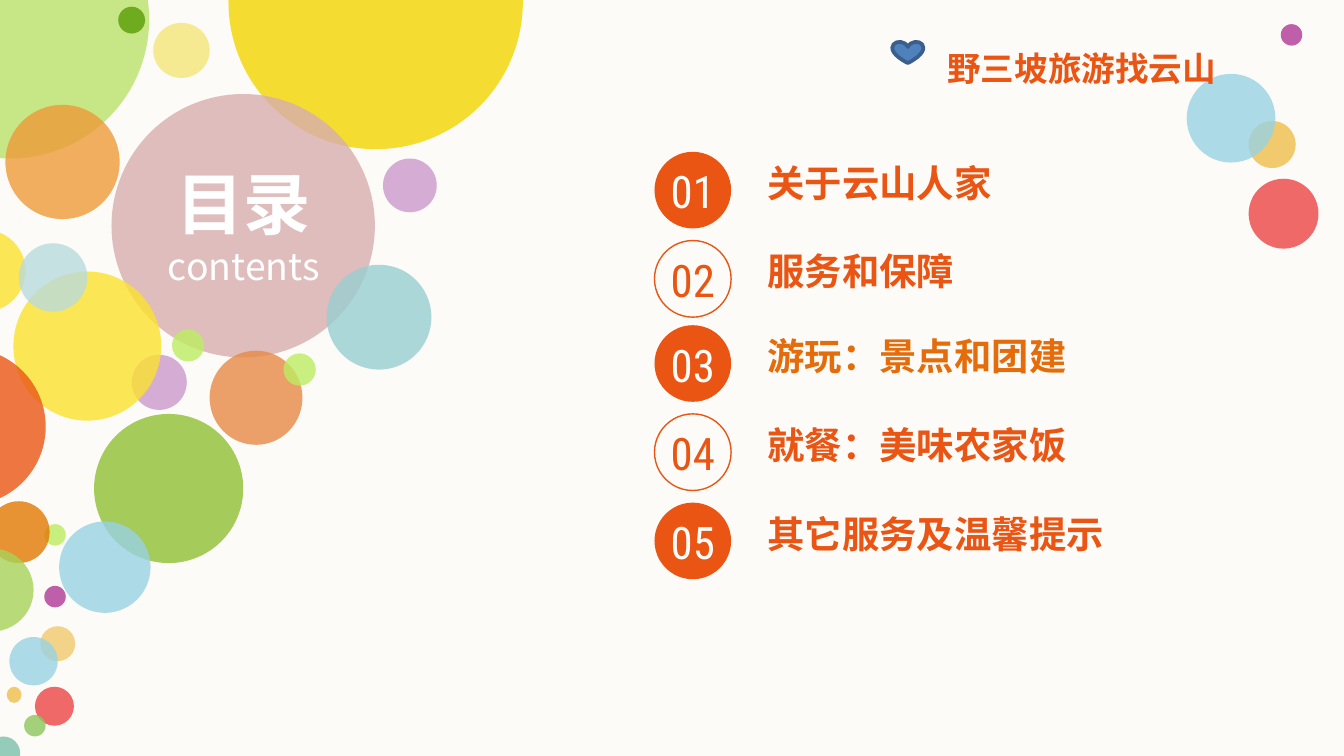
import typing

import pptx
import pptx.dml.color
import pptx.enum.shapes
import pptx.enum.text
import pptx.oxml.ns
import pptx.util
from lxml import etree

Inches = pptx.util.Inches
Pt = pptx.util.Pt
KIND = pptx.enum.shapes.MSO_SHAPE
ALIGN = pptx.enum.text.PP_ALIGN
qn = pptx.oxml.ns.qn

ORANGE = "EA5514"
CREAM = "FCFBF7"
WHITE = "FFFFFF"
CJK = "Noto Sans CJK SC"
ROBOTO = "Roboto Condensed"
CALIBRI = "Calibri"


class Bubble(typing.NamedTuple):
    left: float
    top: float
    width: float
    height: float
    color: str
    alpha: int = 80


class Item(typing.NamedTuple):
    top: float
    label: str
    width: float
    font: str
    color: str = ORANGE


LEFT = [
    Bubble(-0.96, -0.89, 2.07, 2.07, "BAE36B"),
    Bubble(0.88, 0.05, 0.2, 0.2, "6EAB1F", 100),
    Bubble(0.04, 0.78, 0.85, 0.85, "ED9B38"),
    Bubble(1.14, 0.17, 0.42, 0.41, "F5EA91", 100),
    Bubble(1.7, -1.08, 2.19, 2.19, "F4D500"),
    Bubble(0.83, 0.7, 1.96, 1.96, "D8AEAF"),
    Bubble(2.43, 1.97, 0.78, 0.78, "99CED2"),
    Bubble(2.85, 1.18, 0.4, 0.4, "CB99CC"),
    Bubble(1.56, 2.61, 0.69, 0.7, "E78A47"),
    Bubble(0.7, 3.08, 1.11, 1.11, "A5CB5A", 100),
    Bubble(2.11, 2.63, 0.24, 0.24, "BDED63"),
    Bubble(1.28, 2.45, 0.24, 0.24, "BCED61"),
    Bubble(0.98, 2.64, 0.41, 0.41, "CB99CC"),
    Bubble(0.1, 2.02, 1.1, 1.11, "FBE22D"),
    Bubble(-0.42, 1.71, 0.61, 0.61, "FBE22D"),
    Bubble(0.33, 3.9, 0.16, 0.16, "BCED60"),
    Bubble(0.33, 4.36, 0.16, 0.16, "B03896"),
    Bubble(0.3, 4.66, 0.26, 0.26, "F0CA6C"),
    Bubble(0.05, 5.11, 0.11, 0.12, "F0CA6C", 100),
    Bubble(-0.1, 5.48, 0.25, 0.25, "7BBFAA"),
    Bubble(0.26, 5.11, 0.29, 0.29, "EB4544"),
    Bubble(0.18, 5.32, 0.16, 0.16, "8DC65B"),
    Bubble(0.07, 4.74, 0.36, 0.36, "98D2E3"),
    Bubble(0.14, 1.81, 0.51, 0.51, "B9DBDD"),
    Bubble(0.44, 3.88, 0.68, 0.68, "98D2E3"),
    Bubble(-0.09, 3.73, 0.46, 0.46, "E27902"),
    Bubble(-0.38, 4.08, 0.63, 0.62, "A9D25A"),
    Bubble(-0.83, 2.59, 1.17, 1.17, ORANGE),
]
RIGHT = [
    Bubble(9.53, 0.18, 0.16, 0.16, "B03896"),
    Bubble(9.29, 0.9, 0.35, 0.35, "F0CA6C", 100),
    Bubble(9.29, 1.33, 0.52, 0.52, "EB4544"),
    Bubble(8.83, 0.55, 0.66, 0.66, "98D2E3"),
]
ITEMS = [
    Item(1.13, "关于云山人家", 2.13, ROBOTO),
    Item(1.79, "服务和保障", 2.13, ROBOTO),
    Item(2.42, "游玩：景点和团建", 2.91, CALIBRI, "E46C0A"),
    Item(3.08, "就餐：美味农家饭", 2.36, CALIBRI),
    Item(3.74, "其它服务及温馨提示", 3.12, CALIBRI),
]


def paint(target, color: str) -> None:
    """Set the colour of a fill, once made solid."""
    target.solid()
    target.fore_color.rgb = pptx.dml.color.RGBColor.from_string(color)


def add_form(slide, kind, left: float, top: float, width: float, height: float,
             fill: str = "", line: str = "", weight: float = 0.75):
    form = slide.shapes.add_shape(
        kind, Inches(left), Inches(top), Inches(width), Inches(height))
    form.shadow.inherit = False
    if fill:
        paint(form.fill, fill)
    else:
        form.fill.background()
    if line:
        paint(form.line.fill, line)
        form.line.width = Pt(weight)
    else:
        form.line.fill.background()
    return form


def add_bubble(slide, item: Bubble) -> None:
    form = add_form(slide, KIND.OVAL, *item[:4], fill=item.color)
    if item.alpha < 100:
        tint = form.element.spPr.find(qn("a:solidFill")).find(qn("a:srgbClr"))
        etree.SubElement(tint, qn("a:alpha"), val=str(item.alpha * 1000))


def set_frame(frame, wrap: bool = True, inset: float = 0) -> None:
    frame.word_wrap = wrap
    frame.vertical_anchor = pptx.enum.text.MSO_ANCHOR.TOP
    frame.margin_left = frame.margin_right = Inches(inset)
    frame.margin_top = frame.margin_bottom = Inches(inset / 2)


def add_run(para, text: str, size: int, font: str, color: str,
            bold: bool = False, align=ALIGN.LEFT) -> None:
    para.alignment = align
    run = para.add_run()
    run.text = text
    run.font.size = Pt(size)
    run.font.name = font
    run.font.bold = bold
    paint(run.font.fill, color)
    latin = run.font._element.find(qn("a:latin"))
    latin.addnext(latin.makeelement(qn("a:ea"), {"typeface": CJK}))


def add_box(slide, left: float, top: float, width: float, height: float):
    return slide.shapes.add_textbox(
        Inches(left), Inches(top), Inches(width), Inches(height)).text_frame


def add_title(slide) -> None:
    title = slide.shapes.title
    title.left, title.top = Inches(1.06), Inches(1.21)
    title.width, title.height = Inches(1.51), Inches(0.94)
    title.element.getparent().append(title.element)  # in front of the bubbles
    frame = title.text_frame
    set_frame(frame)
    frame.auto_size = pptx.enum.text.MSO_AUTO_SIZE.NONE
    add_run(frame.paragraphs[0], "目录", 36, CJK, WHITE, True, ALIGN.CENTER)
    add_run(frame.add_paragraph(), "contents", 20, CJK, WHITE, False, ALIGN.CENTER)


def add_item(slide, rank: int, item: Item) -> None:
    """Draw a numbered disc, solid for odd ranks, with its label."""
    solid = rank % 2 == 1
    add_form(slide, KIND.OVAL, 4.87, item.top, 0.57, 0.57,
             fill=ORANGE if solid else "", line="" if solid else ORANGE)
    frame = add_box(slide, 4.87, item.top + 0.09, 0.57, 0.4)
    set_frame(frame)
    add_run(frame.paragraphs[0], f"{rank:02}", 24, ROBOTO,
            CREAM if solid else ORANGE, align=ALIGN.CENTER)
    frame = add_box(slide, 5.71, item.top + 0.06, item.width, 0.34)
    set_frame(frame)
    add_run(frame.paragraphs[0], item.label, 20, item.font, item.color, True)


def main() -> None:
    deck = pptx.Presentation()
    deck.slide_width = Inches(10)
    deck.slide_height = deck.slide_width * 9 // 16
    slide = deck.slides.add_slide(deck.slide_layouts.get_by_name("Title Only"))
    paint(slide.background.fill, CREAM)

    for bubble in LEFT:
        add_bubble(slide, bubble)
    add_title(slide)
    for rank, item in enumerate(ITEMS, 1):
        add_item(slide, rank, item)
    for bubble in RIGHT:
        add_bubble(slide, bubble)

    frame = add_box(slide, 6.95, 0.31, 2.28, 0.4)
    set_frame(frame, wrap=False, inset=0.1)
    add_run(frame.paragraphs[0], "野三坡旅游找云山", 18, CALIBRI, ORANGE, True)
    add_form(slide, KIND.HEART, 6.64, 0.31, 0.23, 0.16, "4F81BD", "3A5F8C", 2)
    deck.save("out.pptx")


if __name__ == "__main__":
    main()
